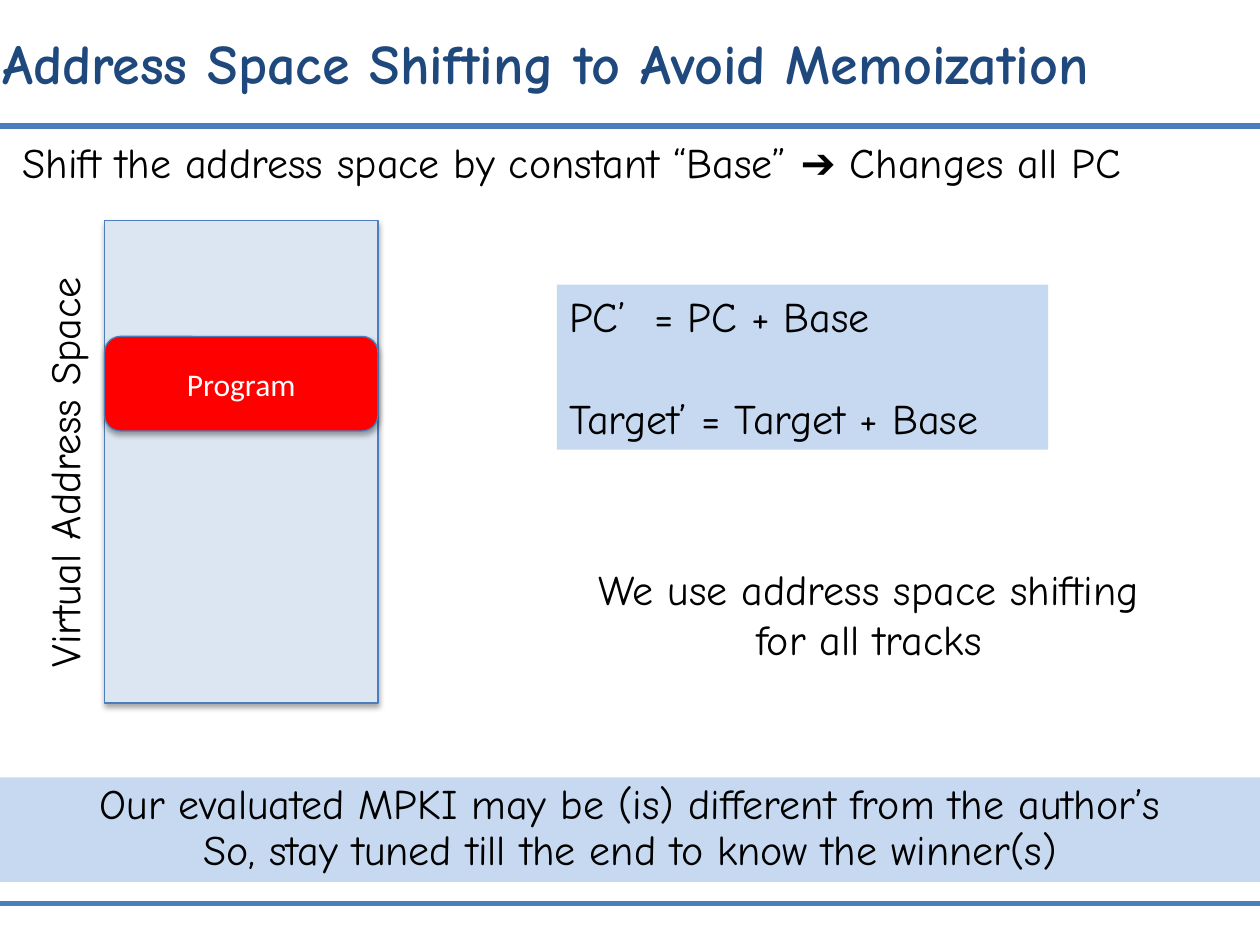
"""Build the slide on address space shifting."""
from pptx import Presentation
from pptx.dml.color import RGBColor
from pptx.enum.shapes import MSO_CONNECTOR, MSO_SHAPE
from pptx.enum.text import MSO_ANCHOR, PP_ALIGN
from pptx.oxml.ns import qn
from pptx.util import Inches, Pt
from lxml.etree import SubElement

BLACK = RGBColor(0, 0, 0)
WHITE = RGBColor(255, 255, 255)
RED = RGBColor(255, 0, 0)
NAVY = RGBColor(0x1F, 0x49, 0x7D)
BLUE = RGBColor(0x4B, 0x7E, 0xBC)
PALE = RGBColor(0xDC, 0xE6, 0xF2)
SKY = RGBColor(0xC6, 0xD9, 0xF1)
LEFT, MID = PP_ALIGN.LEFT, PP_ALIGN.CENTER
WIDE = 10

RULES = [1, 7.17]
SPACE = (0.83, 1.75, 2.17, 3.83)
PROGRAM = (0.83, 2.67, 2.17, 0.75)
TITLE = "Address Space Shifting to Avoid Memoization"
NOTES = [
    ((0.08, 1.08, 9.75, 0.47), LEFT, 0.9, 0,
     ["Shift the address space by constant “Base” ➔ Changes all PC"]),
    ((4.39, 4.42, 5.01, 0.91), MID, 1, 0,
     ["We use address space shifting\vfor all tracks"]),
    ((-1.36, 3.28, 3.73, 0.5), LEFT, 1, 270, ["Virtual Address Space"]),
]
PANELS = [
    ((0, 6.17, WIDE, 0.83), MID, 0.9, 0,
     ["Our evaluated MPKI may be (is) different from the author’s",
      "So, stay tuned till the end to know the winner(s)"]),
    ((4.42, 2.26, 3.9, 1.31), LEFT, 1, 29,
     ["PC’  = PC + Base", "Target’ = Target + Base"]),
]


def write(shape, lines, align=LEFT, size=24, color=BLACK, face="Comic Neue",
          bold=False, pitch=1, gap=0, anchor=MSO_ANCHOR.TOP):
    frame = shape.text_frame
    frame.word_wrap = True
    frame.vertical_anchor = anchor
    for i, line in enumerate(lines):
        para = frame.add_paragraph() if i else frame.paragraphs[0]
        para.text = line
        para.alignment = align
        para.line_spacing = pitch
        para.space_before = Pt(gap if i else 0)
        font = para.font
        font.name, font.size, font.bold = face, Pt(size), bold
        font.color.rgb = color


def block(shapes, kind, box, fill, edge=None):
    shape = shapes.add_shape(kind, *map(Inches, box))
    shape.fill.solid()
    shape.fill.fore_color.rgb = fill
    if edge is None:
        shape.line.fill.background()
        shape.shadow.inherit = False
    else:
        shape.line.color.rgb = edge
        shape.line.width = Pt(0.75)
    return shape


def main():
    deck = Presentation()
    deck.slide_width, deck.slide_height = Inches(WIDE), Inches(7.5)
    shapes = deck.slides.add_slide(deck.slide_layouts[6]).shapes

    for y in RULES:
        rule = shapes.add_connector(MSO_CONNECTOR.STRAIGHT, 0, Inches(y),
                                    Inches(WIDE), Inches(y))
        rule.line.color.rgb = BLUE
        rule.line.width = Pt(3)
        SubElement(rule._element.spPr, qn("a:effectLst"))

    title = shapes.add_textbox(*map(Inches, (-0.08, 0.18, 10.23, 0.64)))
    write(title, [TITLE], size=32, color=NAVY, bold=True)

    block(shapes, MSO_SHAPE.RECTANGLE, SPACE, PALE, BLUE)
    program = block(shapes, MSO_SHAPE.ROUNDED_RECTANGLE, PROGRAM, RED, BLUE)
    write(program, ["Program"], MID, 18, WHITE, "Calibri",
          anchor=MSO_ANCHOR.MIDDLE)

    for box, align, pitch, gap, lines in PANELS:
        panel = block(shapes, MSO_SHAPE.RECTANGLE, box, SKY)
        write(panel, lines, align, pitch=pitch, gap=gap)

    for box, align, pitch, turn, lines in NOTES:
        note = shapes.add_textbox(*map(Inches, box))
        note.rotation = turn
        write(note, lines, align, pitch=pitch)

    deck.save("out.pptx")


if __name__ == "__main__":
    main()
